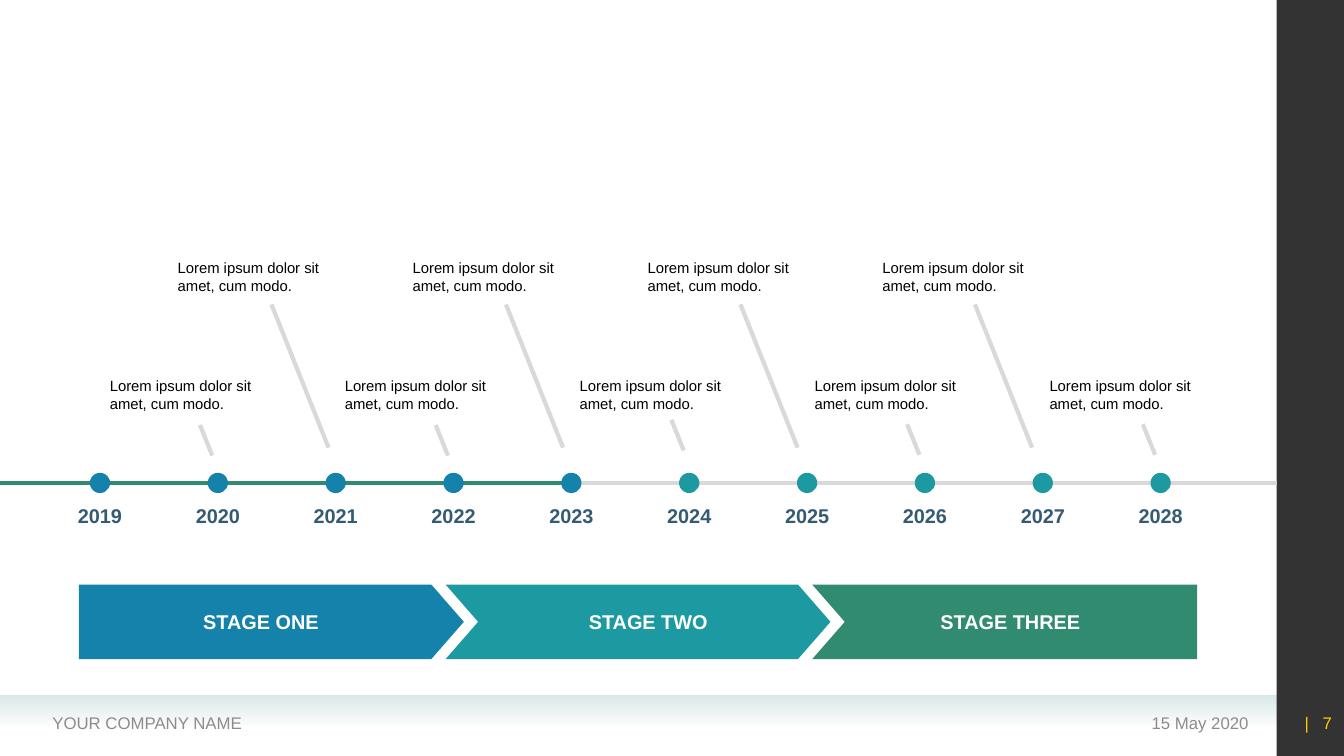
from pptx import Presentation
from pptx.dml.color import RGBColor
from pptx.enum.shapes import MSO_CONNECTOR as Connector, MSO_SHAPE as Shape
from pptx.enum.text import MSO_ANCHOR as Anchor, PP_ALIGN as Align
from pptx.oxml.ns import qn
from pptx.util import Cm, Pt
from lxml.etree import SubElement

BLUE, TEAL, GREEN = "1482AB", "1D9AA1", "318B71"
GREY, NAVY, FOOTER_GREY = "D9D9D9", "335B74", "8C8C8C"
BLACK, WHITE, YELLOW, MIST = "000000", "FFFFFF", "FFCC00", "D9E9E8"

AXIS_Y = 12.17
SIDEBAR_X = 32.17
FIRST_YEAR_X, YEAR_STEP = 2.52, 2.97
DOT_SIZE = 0.51
CAPTION = "Lorem ipsum dolor sit amet, cum modo."
CAPTION_STEP = 5.92


def color(hex_value):
    return RGBColor.from_string(hex_value)


def set_alpha(color_element, percent):
    SubElement(color_element, qn("a:alpha")).set("val", str(percent * 1000))


def paint(shape, fill):
    shape.shadow.inherit = False
    shape.fill.solid()
    shape.fill.fore_color.rgb = color(fill)
    shape.line.fill.background()


def add_solid(slide, kind, left, top, width, height, fill):
    solid = slide.shapes.add_shape(kind, Cm(left), Cm(top), Cm(width), Cm(height))
    paint(solid, fill)
    return solid


def add_line(slide, start, end, stroke):
    line = slide.shapes.add_connector(
        Connector.STRAIGHT, *(Cm(value) for value in (*start, *end)))
    line.line.color.rgb = color(stroke)
    line.line.width = Pt(3)
    SubElement(line._element.spPr, qn("a:effectLst"))


def add_text(slide, text, box, size, ink, align=Align.LEFT, bold=False,
             anchor=Anchor.MIDDLE, insets=(0.25, 0.13)):
    label = slide.shapes.add_textbox(*(Cm(value) for value in box))
    frame = label.text_frame
    frame.word_wrap = True
    frame.vertical_anchor = anchor
    frame.margin_left = frame.margin_right = Cm(insets[0])
    frame.margin_top = frame.margin_bottom = Cm(insets[1])
    frame.text = text
    paragraph = frame.paragraphs[0]
    paragraph.alignment = align
    run = paragraph.runs[0]
    run.font.name = "Arial"
    run.font.size = Pt(size)
    run.font.bold = bold
    run.font.color.rgb = color(ink)
    return run


def add_stage(slide, left, fill, notch, tip):
    top, width, height = 14.73, 9.7, 1.88
    right, middle, bottom = left + width, top + height / 2, top + height
    outline = [(right - tip, top), (left, top), (left + notch, middle),
               (left, bottom), (right - tip, bottom), (right, middle)]
    points = [(Cm(x), Cm(y)) for x, y in outline]
    builder = slide.shapes.build_freeform(*points[0], scale=1.0)
    builder.add_line_segments(points[1:], close=True)
    paint(builder.convert_to_shape(), fill)


def add_frame(slide):
    band = add_solid(slide, Shape.RECTANGLE, 0, 17.52, SIDEBAR_X, 0.79, MIST)
    band.fill.gradient()
    band.fill.gradient_angle = 270
    for stop in band.fill.gradient_stops:
        stop.color.rgb = color(MIST)
    set_alpha(list(band._element.iter(qn("a:srgbClr")))[-1], 0)

    sidebar = add_solid(slide, Shape.RECTANGLE, SIDEBAR_X, 0, 1.7, 19.05, BLACK)
    set_alpha(next(sidebar._element.iter(qn("a:srgbClr"))), 80)

    add_text(slide, "15 May 2020", (23.11, 17.7, 8.61, 1.02), 12, FOOTER_GREY, Align.RIGHT)
    add_text(slide, "YOUR COMPANY NAME", (1.07, 17.7, 12.45, 1.02), 12, FOOTER_GREY)
    page = add_text(slide, "| 7", (32.12, 17.7, 1.7, 1.02), 12, YELLOW, Align.RIGHT)
    page._r.get_or_add_rPr().set("spc", "330")


def add_stages(slide):
    stages = [("STAGE ONE", BLUE, 0, 0.82, 1.98, 9.19),
              ("STAGE TWO", TEAL, 0.82, 0.82, 12.17, 8.33),
              ("STAGE THREE", GREEN, 0.82, 0, 21.41, 8.1)]
    for index, (title, fill, notch, tip, title_x, title_width) in enumerate(stages):
        add_stage(slide, 1.99 + index * 9.24, fill, notch, tip)
        add_text(slide, title, (title_x, 15.24, title_width, 0.86), 14.2, WHITE,
                 Align.CENTER, bold=True)


def add_timeline(slide):
    today_x = FIRST_YEAR_X + 4 * YEAR_STEP
    add_line(slide, (today_x, AXIS_Y), (SIDEBAR_X, AXIS_Y), GREY)
    add_line(slide, (0, AXIS_Y), (today_x, AXIS_Y), GREEN)
    for index in range(10):
        center = FIRST_YEAR_X + index * YEAR_STEP
        add_solid(slide, Shape.OVAL, center - DOT_SIZE / 2, AXIS_Y - DOT_SIZE / 2,
                  DOT_SIZE, DOT_SIZE, BLUE if index < 5 else TEAL)
        add_text(slide, str(2019 + index), (center - 0.83, 12.57, 1.66, 0.86), 14.2,
                 NAVY, Align.CENTER, bold=True, insets=(0, 0.13))


def add_caption(slide, left, top):
    add_text(slide, CAPTION, (left, top, 4.22, 1.02), 10.6, BLACK,
             anchor=Anchor.TOP, insets=(0.1, 0.05))


def add_captions(slide):
    for index in range(4):
        leader_x = 8.28 + index * 5.91
        add_line(slide, (leader_x, 11.28), (leader_x - 1.44, 7.67), GREY)
        add_caption(slide, 4.38 + index * CAPTION_STEP, 6.48)
    for index, leader_y in enumerate((11.48, 11.48, 11.35, 11.46, 11.46)):
        leader_x = 5.35 + index * 5.94
        add_line(slide, (leader_x, leader_y), (leader_x - 0.31, leader_y - 0.77), GREY)
        add_caption(slide, 2.67 + index * CAPTION_STEP, 9.45)


def main():
    deck = Presentation()
    deck.slide_width, deck.slide_height = Cm(33.87), Cm(19.05)
    slide = deck.slides.add_slide(deck.slide_layouts[6])
    add_frame(slide)
    add_stages(slide)
    add_timeline(slide)
    add_captions(slide)
    deck.save("out.pptx")


if __name__ == "__main__":
    main()
